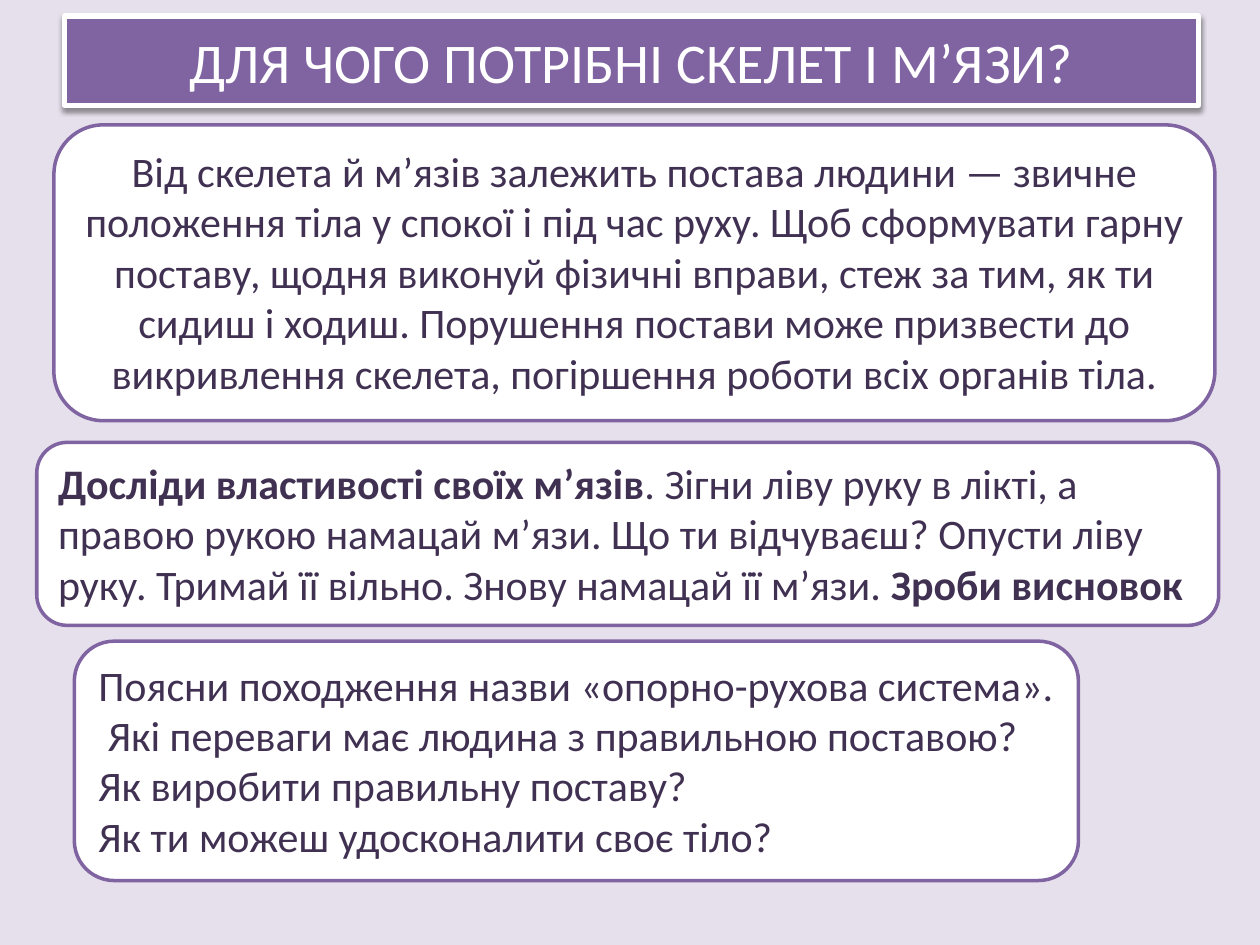
"""Builds a slide on posture, the skeleton and muscles."""
from dataclasses import dataclass

from lxml import etree
from pptx import Presentation
from pptx.dml.color import RGBColor
from pptx.enum import shapes, text
from pptx.oxml import ns
from pptx.util import Pt


@dataclass(frozen=True)
class Theme:
    background: str = "E6E0EC"
    accent: str = "8064A2"
    paper: str = "FFFFFF"
    ink: str = "403152"
    shadow: str = "000000"
    font: str = "Calibri"
    title_size: int = 32
    body_size: int = 24


class PostureSlide:
    def __init__(self, presentation, theme):
        self.theme = theme
        self.slide = presentation.slides.add_slide(presentation.slide_layouts[6])
        backdrop = self.slide.background.fill
        backdrop.solid()
        backdrop.fore_color.rgb = RGBColor.from_string(theme.background)

    def panel(self, bounds, fill, line, line_width):
        panel = self.slide.shapes.add_shape(
            shapes.MSO_SHAPE.ROUNDED_RECTANGLE, *map(Pt, bounds))
        panel.shadow.inherit = False
        panel.fill.solid()
        panel.fill.fore_color.rgb = RGBColor.from_string(fill)
        panel.line.color.rgb = RGBColor.from_string(line)
        panel.line.width = Pt(line_width)
        panel.text_frame.word_wrap = True
        return panel

    def style(self, run, size, color, bold=False):
        run.font.name = self.theme.font
        run.font.size = Pt(size)
        run.font.bold = bold
        run.font.color.rgb = RGBColor.from_string(color)

    def cast_shadow(self, panel):
        effects = panel._element.spPr.find(ns.qn("a:effectLst"))
        shadow = etree.SubElement(
            effects, ns.qn("a:outerShdw"), blurRad=str(Pt(3.1)), dist=str(Pt(1.6)),
            dir="5400000", rotWithShape="0")
        color = etree.SubElement(shadow, ns.qn("a:srgbClr"), val=self.theme.shadow)
        etree.SubElement(color, ns.qn("a:alpha"), val="38000")

    def title(self, bounds, wording):
        theme = self.theme
        banner = self.panel(bounds, theme.accent, theme.paper, 3)
        banner.adjustments[0] = 0
        self.cast_shadow(banner)
        frame = banner.text_frame
        frame.vertical_anchor = text.MSO_ANCHOR.MIDDLE
        frame.text = wording
        heading = frame.paragraphs[0]
        heading.alignment = text.PP_ALIGN.CENTER
        self.style(heading.runs[0], theme.title_size, theme.paper)

    def card(self, bounds, paragraphs, align=text.PP_ALIGN.LEFT, indents=None):
        """Each paragraph is a list of (wording, bold) pairs."""
        theme = self.theme
        frame = self.panel(bounds, theme.paper, theme.accent, 2).text_frame
        frame.vertical_anchor = text.MSO_ANCHOR.TOP
        frame.auto_size = text.MSO_AUTO_SIZE.SHAPE_TO_FIT_TEXT
        for index, pieces in enumerate(paragraphs):
            paragraph = frame.add_paragraph() if index else frame.paragraphs[0]
            paragraph.alignment = align
            if indents and indents[index]:
                paragraph._p.get_or_add_pPr().set("indent", str(Pt(indents[index])))
            for wording, bold in pieces:
                run = paragraph.add_run()
                run.text = wording
                self.style(run, theme.body_size, theme.ink, bold)


def main():
    presentation = Presentation()
    presentation.slide_width, presentation.slide_height = Pt(720), Pt(540)
    posture = PostureSlide(presentation, Theme())
    posture.title((36.9, 9.2, 648, 51), "ДЛЯ ЧОГО ПОТРІБНІ СКЕЛЕТ І М’ЯЗИ?")
    posture.card((30.8, 71.4, 663.4, 169), [[(
        "Від скелета й м’язів залежить постава людини — звичне положення тіла "
        "у спокої і під час руху. Щоб сформувати гарну поставу, щодня виконуй "
        "фізичні вправи, стеж за тим, як ти сидиш і ходиш. Порушення постави "
        "може призвести до викривлення скелета, погіршення роботи всіх органів "
        "тіла.", False)]], text.PP_ALIGN.CENTER)
    posture.card((21, 252.8, 675.4, 104.6), [[
        ("Досліди властивості своїх м’язів", True),
        (". Зігни ліву руку в лікті, а правою рукою намацай м’язи. Що ти "
         "відчуваєш? Опусти ліву руку. Тримай її вільно. Знову намацай її "
         "м’язи. ", False),
        ("Зроби висновок", True)]])
    questions = [
        "Поясни походження назви «опорно-рухова система».",
        "Які переваги має людина з правильною поставою? Як виробити правильну "
        "поставу?",
        "Як ти можеш удосконалити своє тіло?"]
    posture.card((42.5, 366.4, 573.8, 136.8),
                 [[(question, False)] for question in questions],
                 indents=(0, 5.4, 0))
    presentation.save("out.pptx")


if __name__ == "__main__":
    main()
